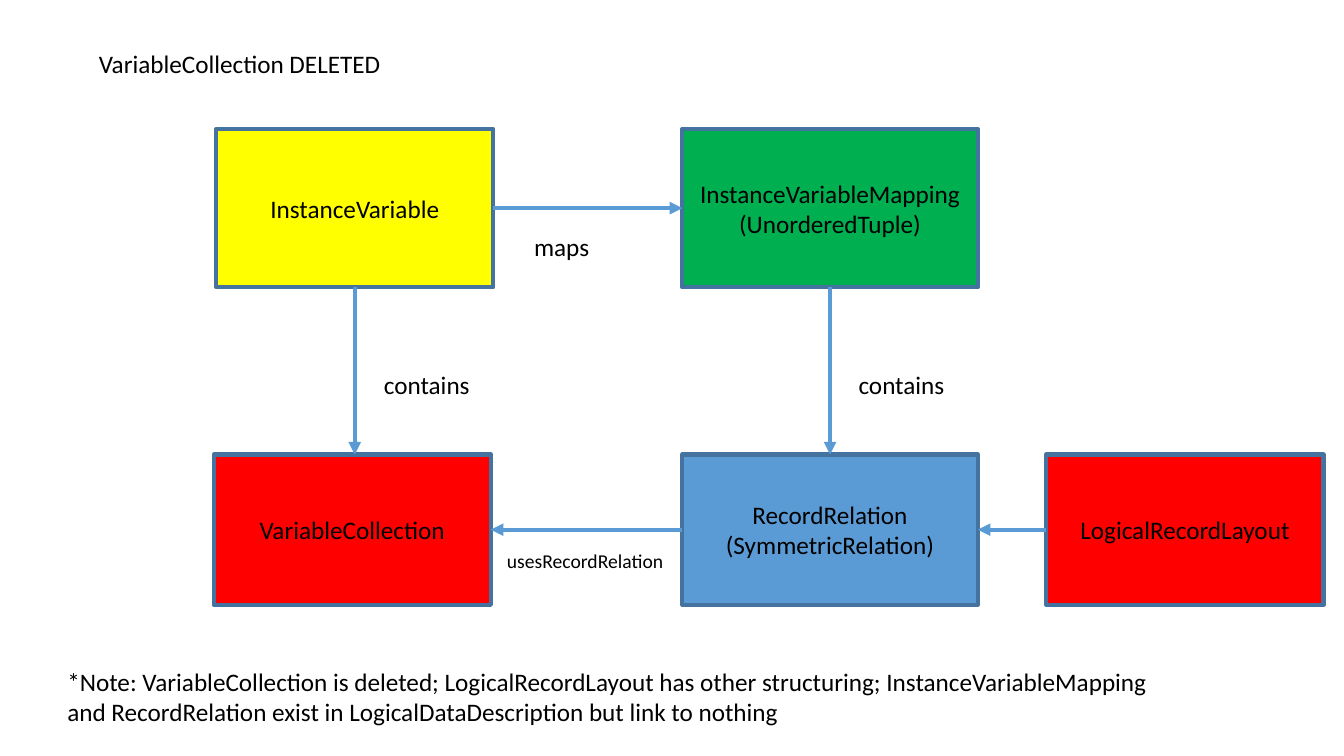
from lxml import etree
from pptx import Presentation
from pptx import util as u
from pptx.dml.color import RGBColor
from pptx.enum import shapes, text
from pptx.oxml.ns import qn

# Content
TITLE = ("VariableCollection DELETED", 63.4, 31, 218, 29)
NOTE = ("*Note: VariableCollection is deleted; LogicalRecordLayout has other structuring; "
        "InstanceVariableMapping and RecordRelation exist in LogicalDataDescription "
        "but link to nothing")

# Rows: top, height
ROWS = {"upper": (92.2, 113), "lower": (324.7, 107.3)}

# Boxes: lines, row, left, width, fill
BOXES = {
    "variable": (["InstanceVariable"], "upper", 154.4, 198, "FFFF00"),
    "mapping": (["InstanceVariableMapping", "(UnorderedTuple)"], "upper", 487.4, 211, "00B050"),
    "collection": (["VariableCollection"], "lower", 152.6, 198, "FF0000"),
    "relation": (["RecordRelation", "(SymmetricRelation)"], "lower", 487.4, 211, "5B9BD5"),
    "layout": (["LogicalRecordLayout"], "lower", 747.4, 198, "FF0000"),
}

# Arrows: from box, side, to box, side
TOP, LEFT, BOTTOM, RIGHT = range(4)
ARROWS = [
    ("variable", BOTTOM, "collection", TOP),
    ("mapping", BOTTOM, "relation", TOP),
    ("variable", RIGHT, "mapping", LEFT),
    ("relation", LEFT, "collection", RIGHT),
    ("layout", LEFT, "relation", RIGHT),
]

# Free text: wording, left, top, width, height, size, wrap
LABELS = [
    ("contains", 267.1, 260, 76.3, 29, 18, False),
    ("contains", 606.2, 260, 76.3, 29, 18, False),
    ("maps", 374.4, 162, 77, 29, 18, True),
    ("usesRecordRelation", 355, 388.8, 127.4, 24.5, 14, False),
    (NOTE, 41, 472.3, 815.8, 51, 18, True),
]


def color(value):
    return RGBColor.from_string(value)


def place(shape, left, top, width, height):
    shape.left, shape.top = u.Pt(left), u.Pt(top)
    shape.width, shape.height = u.Pt(width), u.Pt(height)


def write(shape, lines, size=18, align=text.PP_ALIGN.LEFT,
          anchor=text.MSO_ANCHOR.TOP, wrap=True):
    frame = shape.text_frame
    frame.word_wrap = wrap
    frame.auto_size = text.MSO_AUTO_SIZE.NONE
    frame.vertical_anchor = anchor
    for index, line in enumerate(lines):
        para = frame.add_paragraph() if index else frame.paragraphs[0]
        para.alignment = align
        para.line_spacing = 1.0
        span = para.add_run()
        span.text = line
        span.font.name = "Calibri"
        span.font.size = u.Pt(size)
        span.font.color.rgb = color("000000")


deck = Presentation()
deck.slide_width, deck.slide_height = u.Pt(960), u.Pt(540)
page = deck.slides.add_slide(deck.slide_layouts[5])

# Title
title = page.shapes.title
place(title, *TITLE[1:])
write(title, [TITLE[0]], wrap=False)

# Boxes
boxes = {}
for name, (lines, row, left, width, fill) in BOXES.items():
    top, height = ROWS[row]
    box = page.shapes.add_shape(shapes.MSO_SHAPE.RECTANGLE, 0, 0, 0, 0)
    place(box, left, top, width, height)
    box.shadow.inherit = False
    box.fill.solid()
    box.fill.fore_color.rgb = color(fill)
    box.line.color.rgb = color("43739E")
    box.line.width = u.Pt(3)
    write(box, lines, align=text.PP_ALIGN.CENTER, anchor=text.MSO_ANCHOR.MIDDLE)
    boxes[name] = box

# Arrows
for source, source_side, target, target_side in ARROWS:
    arrow = page.shapes.add_connector(shapes.MSO_CONNECTOR.STRAIGHT, 0, 0, 0, 0)
    arrow.begin_connect(boxes[source], source_side)
    arrow.end_connect(boxes[target], target_side)
    if source_side == BOTTOM:
        arrow.end_x = arrow.begin_x  # keep downward arrows upright
    arrow.line.color.rgb = color("5B9BD5")
    arrow.line.width = u.Pt(3)
    etree.SubElement(arrow.line._get_or_add_ln(), qn("a:tailEnd"), type="triangle")
    etree.SubElement(arrow._element.spPr, qn("a:effectLst"))

# Labels and note
for words, left, top, width, height, size, wrap in LABELS:
    label = page.shapes.add_textbox(0, 0, 0, 0)
    place(label, left, top, width, height)
    write(label, [words], size, wrap=wrap)

deck.save("out.pptx")
